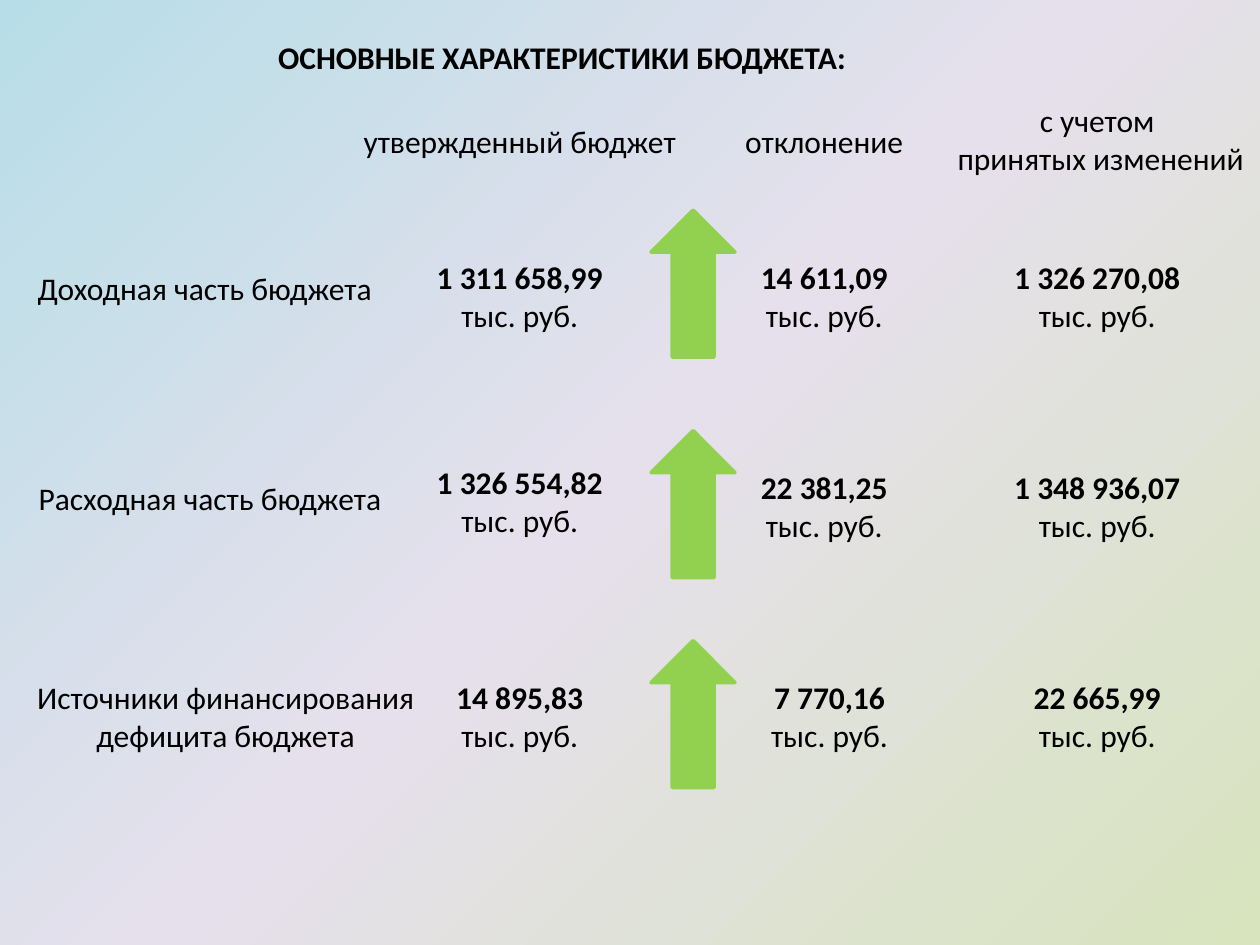
import lxml.etree
import pptx
import pptx.dml.color
import pptx.enum.shapes
import pptx.enum.text
import pptx.oxml
import pptx.oxml.ns
import pptx.util

COLUMNS, ROWS = 120, 90
CELL = pptx.util.Inches(10) // COLUMNS
LINE_ROWS, TWO_LINE_ROWS = 4.8, 8.5
FONT = "Calibri"
BLACK, GREEN = "000000", "92D050"
GRADIENT = [(0, "D7E4BD"), (50, "E6E0EC"), (100, "B7DEE8")]
UNIT = "тыс. руб."


def color(value):
    return pptx.dml.color.RGBColor.from_string(value)


def to_emu(box):
    return [round(length * CELL) for length in box]


def fill_background(slide):
    fill = slide.background.fill
    fill.solid()
    properties = slide.background._cSld.bg.bgPr
    stops = "".join(
        f'<a:gs pos="{position * 1000}"><a:srgbClr val="{value}"/></a:gs>'
        for position, value in GRADIENT
    )
    gradient = pptx.oxml.parse_xml(
        f'<a:gradFill {pptx.oxml.ns.nsdecls("a")} rotWithShape="1">'
        f"<a:gsLst>{stops}</a:gsLst>"
        '<a:path path="circle"><a:fillToRect l="100000" t="100000"/></a:path>'
        "</a:gradFill>"
    )
    properties.replace(properties.find(pptx.oxml.ns.qn("a:solidFill")), gradient)


def add_text(slide, box, paragraphs, wrap=True):
    frame = slide.shapes.add_textbox(*to_emu(box)).text_frame
    frame.word_wrap = wrap
    frame.auto_size = pptx.enum.text.MSO_AUTO_SIZE.SHAPE_TO_FIT_TEXT
    for index, runs in enumerate(paragraphs):
        paragraph = frame.add_paragraph() if index else frame.paragraphs[0]
        paragraph.alignment = pptx.enum.text.PP_ALIGN.CENTER
        for text, bold in runs:
            run = paragraph.add_run()
            run.text = text
            run.font.name = FONT
            run.font.size = pptx.util.Pt(18)
            run.font.bold = bold
            run.font.color.rgb = color(BLACK)


def add_arrow(slide, box):
    shape = slide.shapes.add_shape(
        pptx.enum.shapes.MSO_SHAPE.DOWN_ARROW, *to_emu(box)
    )
    shape.rotation = 180
    shape.shadow.inherit = False
    shape.fill.solid()
    shape.fill.fore_color.rgb = color(GREEN)
    shape.line.color.rgb = color(GREEN)
    shape.line.width = pptx.util.Pt(2)


def add_headings(slide, top):
    title = "ОСНОВНЫЕ ХАРАКТЕРИСТИКИ БЮДЖЕТА:"
    add_text(slide, (25, top, 57.1, LINE_ROWS), [[(title, True)]], wrap=False)
    for left, offset, width, lines in [
        (33, 8, 33, ["утвержденный бюджет"]),
        (69, 8, 19, ["отклонение"]),
        (89, 6, 31, ["с учетом", " принятых изменений"]),
    ]:
        height = LINE_ROWS if len(lines) == 1 else TWO_LINE_ROWS
        add_text(
            slide, (left, top + offset, width, height), [[(line, False)] for line in lines]
        )


def add_budget_row(slide, top, label, label_box, arrow_top, values):
    offset, width, height = label_box
    add_text(slide, (2, top + offset, width, height), [[(label, False)]])
    add_arrow(slide, (62, arrow_top, 8, 14))
    for left, shift, value_width, value in values:
        add_text(
            slide,
            (left, top + shift, value_width, TWO_LINE_ROWS),
            [[(value + " ", True), (UNIT, False)]],
        )


def main():
    presentation = pptx.Presentation()
    presentation.slide_width = COLUMNS * CELL
    presentation.slide_height = ROWS * CELL
    slide = presentation.slides.add_slide(presentation.slide_layouts[6])
    fill_background(slide)
    add_headings(slide, 3)
    add_budget_row(
        slide, 24, "Доходная часть бюджета", (1, 35, LINE_ROWS), 20,
        [(40, 0, 19, "1 311 658,99"), (71, 0, 15, "14 611,09"), (93, 0, 23, "1 326 270,08")],
    )
    add_budget_row(
        slide, 44, "Расходная часть бюджета", (1, 36, LINE_ROWS), 41,
        [(40, -0.5, 19, "1 326 554,82"), (71, 0, 15, "22 381,25"), (95, 0, 19, "1 348 936,07")],
    )
    add_budget_row(
        slide, 64, "Источники финансирования дефицита бюджета", (0, 39, TWO_LINE_ROWS), 61,
        [(40, 0, 19, "14 895,83"), (71, 0, 16, "7 770,16"), (95, 0, 19, "22 665,99")],
    )
    presentation.save("out.pptx")


if __name__ == "__main__":
    main()
